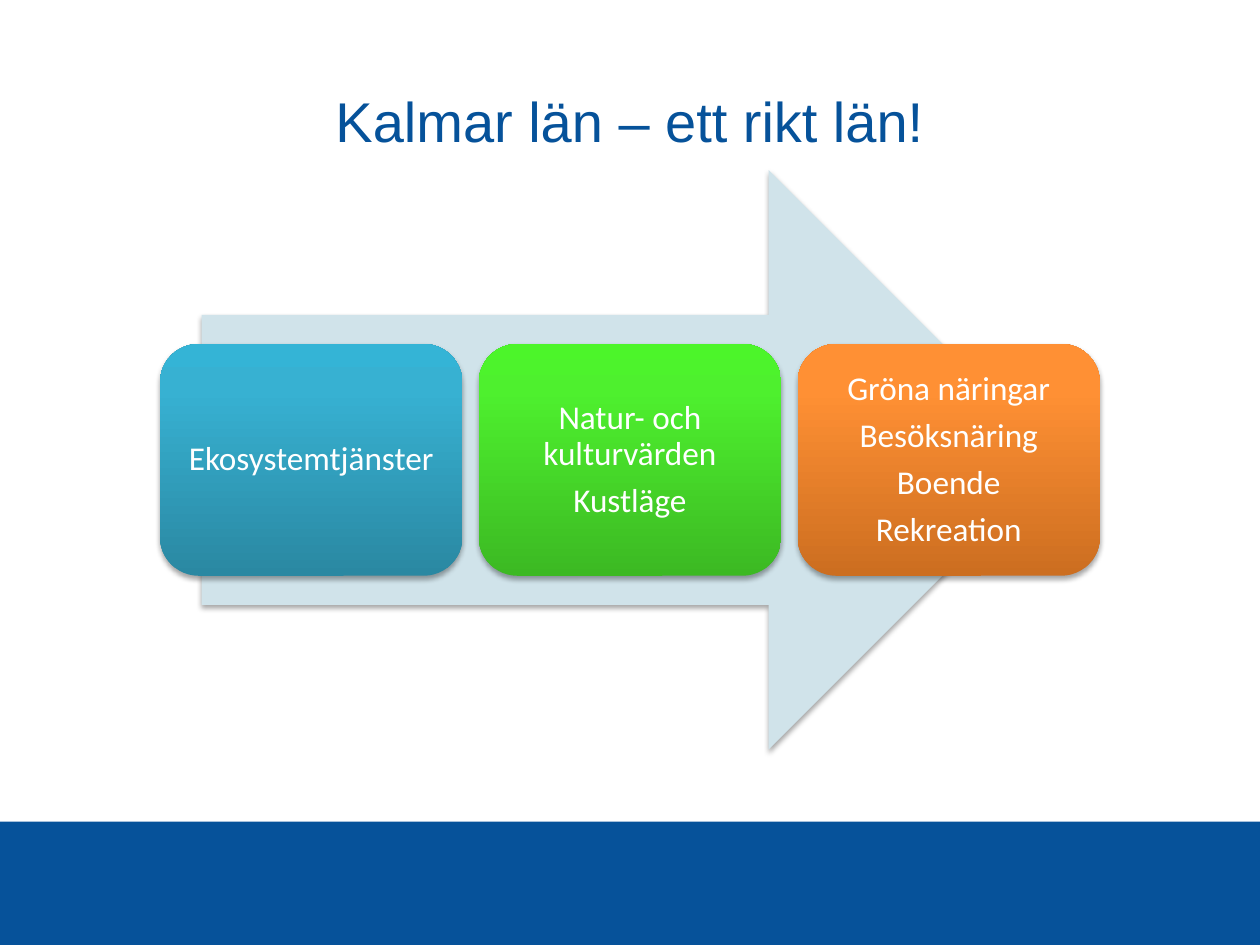
from copy import deepcopy

from lxml.etree import SubElement
from pptx import Presentation
from pptx.dml.color import RGBColor
from pptx.enum.shapes import MSO_SHAPE
from pptx.enum.text import MSO_ANCHOR, PP_ALIGN
from pptx.oxml.ns import qn
from pptx.util import Pt

TITLE = "Kalmar län – ett rikt län!"
# Lines of each card, then its gradient from bottom to top
CARDS = [
    (["Ekosystemtjänster"], ["2A88A2", "37B1D2", "34B4D6"]),
    (["Natur- och kulturvärden", "Kustläge"], ["3CB923", "4EF02E", "4CF52A"]),
    (["Gröna näringar", "Besöksnäring", "Boende", "Rekreation"],
     ["CC6E20", "FF9034", "FF9136"]),
]
STOPS = [0, 0.8, 1]
COLORS = {"blue": "06529A", "arrow": "D0E3EA", "text": "FFFFFF", "shade": "000000"}

WIDTH, HEIGHT = 720, 540
BAND_TOP = 469.5
ARROW_W, ARROW_H, ARROW_TOP = 489.6, 331.2, 97.2
CARD_W, CARD_H, GAP = 172.8, 132.5, 9.36
INSET = 5.76


def rgb(name):
    return RGBColor.from_string(COLORS.get(name, name))


def add_form(slide, kind, left, top, width, height):
    form = slide.shapes.add_shape(kind, Pt(left), Pt(top), Pt(width), Pt(height))
    form.shadow.inherit = False
    form.line.fill.background()
    return form


def fill_flat(form, color):
    form.fill.solid()
    form.fill.fore_color.rgb = rgb(color)


def fill_blend(form, colors):
    """Fill with a vertical three-stop gradient that starts at the bottom."""
    form.fill.gradient()
    stops = form.fill._xPr.find(".//" + qn("a:gsLst"))
    stops.append(deepcopy(stops[-1]))
    for stop, place, color in zip(form.fill.gradient_stops, STOPS, colors):
        stop.position = place
        stop.color.rgb = rgb(color)
    form.fill.gradient_angle = 90


def add_shade(form):
    """Add a soft shadow that falls straight down."""
    effects = form._element.spPr.find(qn("a:effectLst"))
    shade = SubElement(effects, qn("a:outerShdw"), blurRad=str(Pt(3.1)),
                       dist=str(Pt(1.8)), dir="5400000", rotWithShape="0")
    color = SubElement(shade, qn("a:srgbClr"), val=COLORS["shade"])
    SubElement(color, qn("a:alpha"), val="35000")


def set_text(form, lines, font, size, color):
    frame = form.text_frame
    frame.text = "\n".join(lines)
    frame.word_wrap = True
    frame.vertical_anchor = MSO_ANCHOR.MIDDLE
    for para in frame.paragraphs:
        para.alignment = PP_ALIGN.CENTER
        para.font.name = font
        para.font.size = Pt(size)
        para.font.color.rgb = rgb(color)
    return frame


def add_card(slide, left, top, lines, colors):
    card = add_form(slide, MSO_SHAPE.ROUNDED_RECTANGLE, left, top, CARD_W, CARD_H)
    fill_blend(card, colors)
    add_shade(card)
    frame = set_text(card, lines, "Calibri", 19, "text")
    frame.margin_left = frame.margin_right = Pt(INSET)
    frame.margin_top = frame.margin_bottom = Pt(INSET)
    for para in frame.paragraphs:
        para.line_spacing = 0.9
        para.space_after = Pt(6.3)


def main():
    deck = Presentation()
    deck.slide_width, deck.slide_height = Pt(WIDTH), Pt(HEIGHT)
    slide = deck.slides.add_slide(deck.slide_layouts[5])

    title = slide.shapes.title
    title.left, title.top = Pt(72), Pt(39.6)
    title.width, title.height = Pt(576), Pt(57.6)
    set_text(title, [TITLE], "Arial", 32, "blue")

    band = add_form(slide, MSO_SHAPE.RECTANGLE, 0, BAND_TOP, WIDTH, HEIGHT - BAND_TOP)
    fill_flat(band, "blue")

    arrow = add_form(slide, MSO_SHAPE.RIGHT_ARROW, (WIDTH - ARROW_W) / 2, ARROW_TOP,
                     ARROW_W, ARROW_H)
    fill_flat(arrow, "arrow")
    add_shade(arrow)

    step = CARD_W + GAP
    left = (WIDTH - len(CARDS) * step + GAP) / 2
    top = ARROW_TOP + (ARROW_H - CARD_H) / 2
    for i, (lines, colors) in enumerate(CARDS):
        add_card(slide, left + i * step, top, lines, colors)

    deck.save("out.pptx")


if __name__ == "__main__":
    main()
